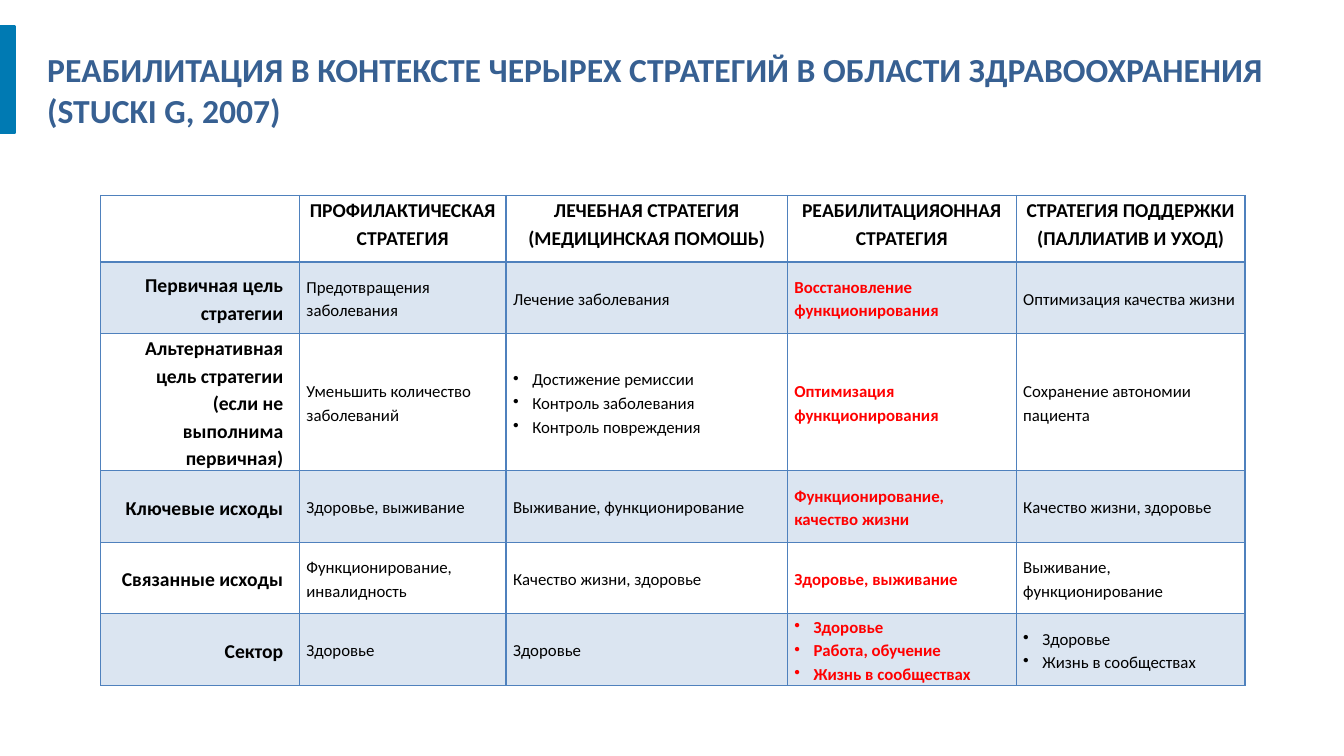
import pptx
import pptx.util
import pptx.dml.color
import pptx.enum.shapes
import pptx.enum.text
import pptx.oxml
import pptx.oxml.ns
from dataclasses import dataclass

TITLE = ("РЕАБИЛИТАЦИЯ В КОНТЕКСТЕ ЧЕРЫРЕХ СТРАТЕГИЙ "
         "В ОБЛАСТИ ЗДРАВООХРАНЕНИЯ (STUCKI G, 2007)")
# A string is one plain paragraph; a tuple is a bulleted list.
ROWS = [
    ["", "ПРОФИЛАКТИЧЕСКАЯ СТРАТЕГИЯ", "ЛЕЧЕБНАЯ СТРАТЕГИЯ (МЕДИЦИНСКАЯ ПОМОШЬ)",
     "РЕАБИЛИТАЦИЯОННАЯ СТРАТЕГИЯ", "СТРАТЕГИЯ ПОДДЕРЖКИ (ПАЛЛИАТИВ И УХОД)"],
    ["Первичная цель стратегии", "Предотвращения заболевания", "Лечение заболевания",
     "Восстановление функционирования", "Оптимизация качества жизни"],
    ["Альтернативная цель стратегии (если не выполнима первичная)",
     "Уменьшить количество заболеваний",
     ("Достижение ремиссии", "Контроль заболевания", "Контроль повреждения"),
     "Оптимизация функционирования", "Сохранение автономии пациента"],
    ["Ключевые исходы", "Здоровье, выживание", "Выживание, функционирование",
     "Функционирование, качество жизни", "Качество жизни, здоровье"],
    ["Связанные исходы", "Функционирование, инвалидность", "Качество жизни, здоровье",
     "Здоровье, выживание", "Выживание, функционирование"],
    ["Сектор", "Здоровье", "Здоровье",
     ("Здоровье", "Работа, обучение", "Жизнь в сообществах"),
     ("Здоровье", "Жизнь в сообществах")],
]
WIDTHS = [1.97, 2.05, 2.79, 2.27, 2.27]
HEIGHTS = [0.66] + [0.71] * 5
FOCUS = 3  # the rehabilitation column


@dataclass(frozen=True)
class Theme:
    font: str = "Calibri"
    title: str = "376092"
    bar: str = "007AB3"
    grid: str = "4F81BD"
    text: str = "000000"
    focus: str = "FF0000"
    head: int = 24
    label: int = 14
    body: int = 12
    tint: int = 20
    space: float = 1.15


LOOK = Theme()
INCH = pptx.util.Inches
ALIGN = pptx.enum.text.PP_ALIGN
qn = pptx.oxml.ns.qn


def rgb(code):
    return pptx.dml.color.RGBColor.from_string(code)


def write(para, text, size, color, bold):
    run = para.add_run()
    run.text = text
    font = run.font
    font.name, font.size, font.bold = LOOK.font, pptx.util.Pt(size), bold
    font.color.rgb = rgb(color)


def border(cell, side, width):
    tag = pptx.oxml.ns.nsdecls("a")
    cell._tc.get_or_add_tcPr().append(pptx.oxml.parse_xml(
        f'<a:ln{side} {tag} w="{pptx.util.Pt(width)}"><a:solidFill>'
        f'<a:srgbClr val="{LOOK.grid}"/></a:solidFill></a:ln{side}>'))


def bullet(para):
    props = para._p.get_or_add_pPr()
    props.set("marL", str(INCH(0.19)))
    props.set("indent", str(INCH(-0.19)))
    mark = props.makeelement(qn("a:buChar"), {"char": "•"})
    props.append(mark)


def tint(cell):
    cell.fill.solid()
    cell.fill.fore_color.rgb = rgb(LOOK.grid)
    color = cell._tc.tcPr.find(qn("a:solidFill")).find(qn("a:srgbClr"))
    alpha = color.makeelement(qn("a:alpha"), {"val": str(LOOK.tint * 1000)})
    color.append(alpha)


def style(cell, row, col):
    cell.margin_left = cell.margin_right = INCH(0.07)
    cell.margin_top = cell.margin_bottom = 0
    if row:
        cell.vertical_anchor = pptx.enum.text.MSO_ANCHOR.MIDDLE
        if col == 0:
            cell.margin_right = INCH(0.16)
    for side in "LRTB":
        border(cell, side, 2 if row == 0 and side == "B" else 1)
    if row % 2:
        tint(cell)
    else:
        cell.fill.background()


def fill(cell, item, row, col):
    label = row == 0 or col == 0
    focus = row > 0 and col == FOCUS
    listed = isinstance(item, tuple)
    for num, text in enumerate(item if listed else (item,)):
        frame = cell.text_frame
        para = frame.add_paragraph() if num else frame.paragraphs[0]
        para.line_spacing = LOOK.space
        if label:
            para.alignment = ALIGN.CENTER if row == 0 else ALIGN.RIGHT
        if listed:
            bullet(para)
        if text:
            write(para, text, LOOK.label if label else LOOK.body,
                  LOOK.focus if focus else LOOK.text, label or focus)


def add_grid(slide):
    frame = slide.shapes.add_table(
        len(ROWS), len(WIDTHS), INCH(1), INCH(1.94),
        INCH(sum(WIDTHS)), INCH(sum(HEIGHTS)))
    table = frame.table
    table.first_row = table.horz_banding = False
    for col, width in zip(table.columns, WIDTHS):
        col.width = INCH(width)
    for line, height in zip(table.rows, HEIGHTS):
        line.height = INCH(height)
    for row, items in enumerate(ROWS):
        for col, item in enumerate(items):
            cell = table.cell(row, col)
            style(cell, row, col)
            fill(cell, item, row, col)


def add_title(slide):
    bar = slide.shapes.add_shape(
        pptx.enum.shapes.MSO_SHAPE.RECTANGLE, 0, INCH(0.26), INCH(0.15), INCH(1.06))
    bar.shadow.inherit = False
    bar.fill.solid()
    bar.fill.fore_color.rgb = bar.line.color.rgb = rgb(LOOK.bar)
    bar.line.width = pptx.util.Pt(2)
    box = slide.shapes.add_textbox(INCH(0.37), INCH(0.44), INCH(12.44), INCH(0.91))
    box.text_frame.word_wrap = True
    box.text_frame.auto_size = pptx.enum.text.MSO_AUTO_SIZE.SHAPE_TO_FIT_TEXT
    write(box.text_frame.paragraphs[0], TITLE, LOOK.head, LOOK.title, True)


def main():
    deck = pptx.Presentation()
    deck.slide_width, deck.slide_height = INCH(13.33), INCH(7.5)
    slide = deck.slides.add_slide(deck.slide_layouts[6])
    add_grid(slide)
    add_title(slide)
    deck.save("out.pptx")


if __name__ == "__main__":
    main()
